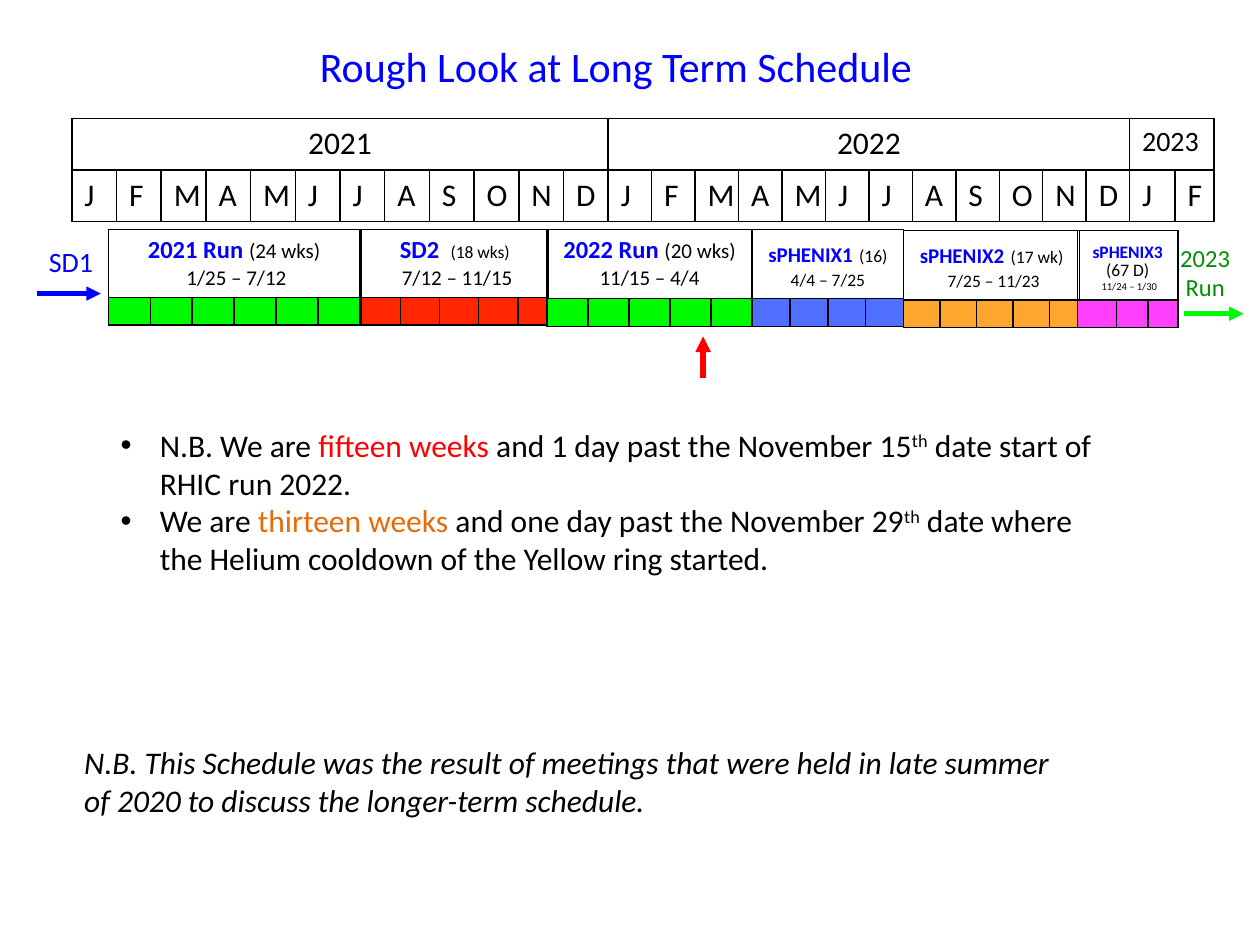
import pptx
import pptx.util
import pptx.dml.color
import pptx.enum.shapes
import pptx.enum.text
import pptx.oxml
import pptx.oxml.ns
import lxml.etree

Inches = pptx.util.Inches
Pt = pptx.util.Pt
RGBColor = pptx.dml.color.RGBColor
qn = pptx.oxml.ns.qn
CENTER = pptx.enum.text.PP_ALIGN.CENTER
LEFT = pptx.enum.text.PP_ALIGN.LEFT
GROW = pptx.enum.text.MSO_AUTO_SIZE.SHAPE_TO_FIT_TEXT

BLACK = RGBColor(0x00, 0x00, 0x00)
BLUE = RGBColor(0x00, 0x00, 0xFF)
RED = RGBColor(0xFF, 0x00, 0x00)
ORANGE = RGBColor(0xE4, 0x6C, 0x0A)
DARK_GREEN = RGBColor(0x00, 0x8F, 0x00)
RUN_GREEN = RGBColor(0x00, 0xFA, 0x00)
SHUTDOWN_RED = RGBColor(0xFF, 0x26, 0x00)
PHASE_BLUE = RGBColor(0x04, 0x32, 0xFF)
PHASE_ORANGE = RGBColor(0xFF, 0x93, 0x00)
PHASE_PINK = RGBColor(0xFF, 0x40, 0xFF)

BORDER = (
    '<a:{} xmlns:a="http://schemas.openxmlformats.org/drawingml/2006/main" w="12700">'
    '<a:solidFill><a:srgbClr val="000000"/></a:solidFill></a:{}>'
)


def write(frame, paragraphs, align=LEFT):
    for index, pieces in enumerate(paragraphs):
        paragraph = frame.paragraphs[0] if index == 0 else frame.add_paragraph()
        paragraph.alignment = align
        for text, size, color, style in pieces:
            run = paragraph.add_run()
            run.text = text
            run.font.name = "Calibri"
            run.font.size = Pt(size)
            run.font.color.rgb = color
            run.font.bold = style == "bold"
            run.font.italic = style == "italic"
            if style == "super":
                run.font._element.set("baseline", "30000")


def add_grid(left, top, widths, heights):
    frame = slide.shapes.add_table(
        len(heights), len(widths), Inches(left), Inches(top),
        Inches(sum(widths)), Inches(sum(heights)))
    grid = frame.table
    grid.first_row = False
    grid.horz_banding = False
    for column, width in zip(grid.columns, widths):
        column.width = Inches(width)
    for row, height in zip(grid.rows, heights):
        row.height = Inches(height)
    for cell in grid.iter_cells():
        cell.fill.background()
        properties = cell._tc.get_or_add_tcPr()
        for position, side in enumerate(("lnL", "lnR", "lnT", "lnB")):
            properties.insert(position, pptx.oxml.parse_xml(BORDER.format(side, side)))
    return grid


deck = pptx.Presentation()
deck.slide_width = Inches(10)
deck.slide_height = Inches(7.5)
slide = deck.slides.add_slide(deck.slide_layouts[6])

calendar = add_grid(0.57, 0.94, [0.355] * 12 + [0.345] * 12 + [0.36, 0.31], [0.41, 0.41])
for year, first, last, size, align in [
    ("2021", 0, 11, 18, CENTER),
    ("2022", 12, 23, 18, CENTER),
    ("2023", 24, 25, 16, LEFT),
]:
    calendar.cell(0, first).merge(calendar.cell(0, last))
    write(calendar.cell(0, first).text_frame, [[(year, size, BLACK, "")]], align)
for column, month in enumerate("JFMAMJJASOND" * 2 + "JF"):
    write(calendar.cell(1, column).text_frame, [[(month, 18, BLACK, "")]])

phases = [
    (0.86, 1.82, [0.333] * 6, 0.53, RUN_GREEN, 100, 1,
     [[("2021 Run ", 14, BLUE, "bold"), ("(24 wks)", 12, BLACK, "")],
      [(" 1/25 – 7/12", 12, BLACK, "")]]),
    (2.87, 1.82, [0.31] * 4 + [0.23], 0.53, SHUTDOWN_RED, 100, 1,
     [[("SD2  ", 14, BLUE, "bold"), ("(18 wks)", 10, BLACK, "")],
      [(" 7/12 – 11/15", 12, BLACK, "")]]),
    (4.34, 1.82, [0.326] * 5, 0.55, RUN_GREEN, 100, 1,
     [[("2022 Run ", 14, BLUE, "bold"), ("(20 wks) 11/15 – 4/4", 12, BLACK, "")]]),
    (5.97, 1.82, [0.3] * 4, 0.55, PHASE_BLUE, 70, 1,
     [[("sPHENIX1", 12, BLUE, "bold"), (" ", 16, BLUE, "bold"),
       ("(16) 4/4 – 7/25", 10, BLACK, "")]]),
    (7.17, 1.83, [0.29] * 4 + [0.23], 0.55, PHASE_ORANGE, 82, 1,
     [[("sPHENIX2", 12, BLUE, "bold"), (" ", 16, BLUE, "bold"),
       ("(17 wk)", 10, BLACK, "")],
      [(" 7/25 – 11/23", 10, BLACK, "")]]),
    (8.55, 1.83, [0.31, 0.25, 0.23], 0.53, PHASE_PINK, 100, 0.78,
     [[("sPHENIX3", 10, BLUE, "bold"), (" ", 16, BLUE, "bold"),
       ("(67 D)", 10, BLACK, "")],
      [(" ", 8, BLACK, ""), ("11/24 – 1/30", 6, BLACK, "")]]),
]
for left, top, widths, label_height, color, opacity, spacing, label in phases:
    phase = add_grid(left, top, widths, [label_height, 0.22])
    phase.cell(0, 0).merge(phase.cell(0, len(widths) - 1))
    heading = phase.cell(0, 0).text_frame
    write(heading, label, CENTER)
    if spacing != 1:
        for paragraph in heading.paragraphs:
            paragraph.line_spacing = spacing
    for column in range(len(widths)):
        block = phase.cell(1, column)
        block.fill.solid()
        block.fill.fore_color.rgb = color
        if opacity < 100:
            shade = block._tc.tcPr.find(qn("a:solidFill")).find(qn("a:srgbClr"))
            lxml.etree.SubElement(shade, qn("a:alpha")).set("val", str(opacity * 1000))
        ending = lxml.etree.SubElement(block.text_frame.paragraphs[0]._p, qn("a:endParaRPr"))
        ending.set("sz", "600")

for x1, y1, x2, y2, color, weight in [
    (0.29, 2.33, 0.8, 2.33, BLUE, 2.75),
    (9.4, 2.49, 9.87, 2.49, RUN_GREEN, 2.75),
    (5.58, 3, 5.58, 2.67, RED, 3),
]:
    arrow = slide.shapes.add_connector(
        pptx.enum.shapes.MSO_CONNECTOR.STRAIGHT,
        Inches(x1), Inches(y1), Inches(x2), Inches(y2))
    arrow.line.color.rgb = color
    arrow.line.width = Pt(weight)
    lxml.etree.SubElement(arrow.line._get_or_add_ln(), qn("a:tailEnd")).set("type", "triangle")
    lxml.etree.SubElement(arrow._element.spPr, qn("a:effectLst"))

texts = [
    (0.29, 1.89, 0.56, 0.37, False, LEFT, False, [[("SD1", 16, BLUE, "")]]),
    (2.44, 0.27, 5.13, 0.5, True, LEFT, False,
     [[("Rough Look at Long Term Schedule", 24, BLUE, "")]]),
    (9.2, 1.88, 0.73, 0.57, True, CENTER, False,
     [[("2023", 14, DARK_GREEN, "")], [("Run", 14, DARK_GREEN, "")]]),
    (0.57, 5.85, 8.12, 0.71, True, LEFT, False,
     [[("N.B. This Schedule was the result of meetings that were held in late summer "
        "of 2020 to discuss the longer-term schedule.", 18, BLACK, "italic")]]),
    (0.86, 3.33, 8.09, 1.31, True, LEFT, True,
     [[("N.B. We are ", 18, BLACK, ""), ("fifteen weeks ", 18, RED, ""),
       ("and 1 day past the November 15", 18, BLACK, ""), ("th", 18, BLACK, "super"),
       (" date start of RHIC run 2022.", 18, BLACK, "")],
      [("We are ", 18, BLACK, ""), ("thirteen weeks ", 18, ORANGE, ""),
       ("and one day past the November 29", 18, BLACK, ""), ("th", 18, BLACK, "super"),
       (" date where the Helium cooldown of the Yellow ring started.", 18, BLACK, "")]]),
]
for left, top, width, height, wrap, align, bulleted, paragraphs in texts:
    box = slide.shapes.add_textbox(Inches(left), Inches(top), Inches(width), Inches(height))
    box.text_frame.word_wrap = wrap
    box.text_frame.auto_size = GROW
    write(box.text_frame, paragraphs, align)
    if bulleted:
        for paragraph in box.text_frame.paragraphs:
            properties = paragraph._p.get_or_add_pPr()
            properties.set("marL", str(Inches(0.31)))
            properties.set("indent", str(Inches(-0.31)))
            lxml.etree.SubElement(properties, qn("a:buFont")).set("typeface", "Arial")
            lxml.etree.SubElement(properties, qn("a:buChar")).set("char", "•")

deck.save("out.pptx")
